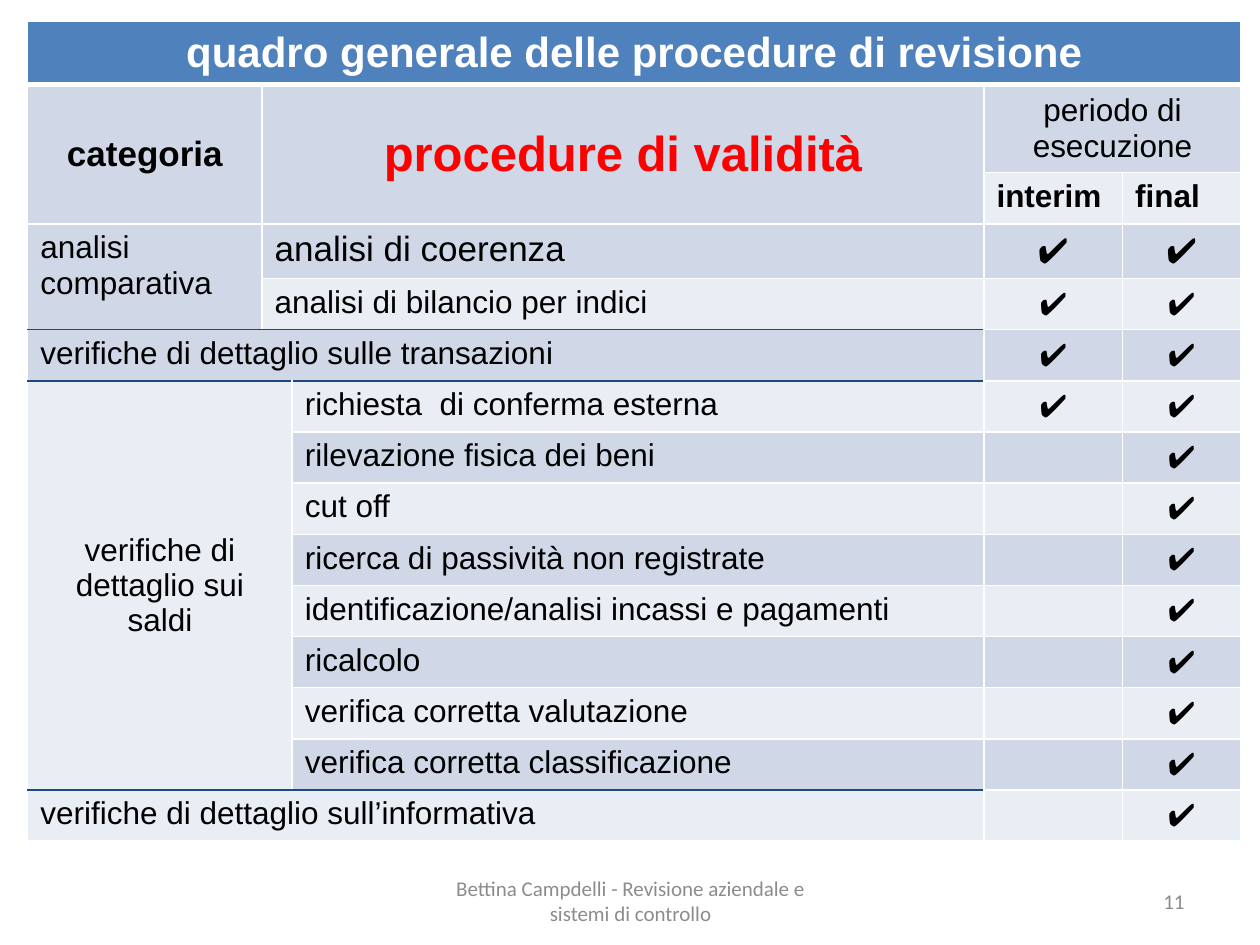
from lxml import etree
from pptx import Presentation
from pptx.dml.color import RGBColor
from pptx.enum.text import MSO_ANCHOR, PP_ALIGN
from pptx.oxml.ns import qn
from pptx.util import Inches, Pt

LEFT, CENTER, RIGHT = PP_ALIGN.LEFT, PP_ALIGN.CENTER, PP_ALIGN.RIGHT
TOP, MIDDLE = MSO_ANCHOR.TOP, MSO_ANCHOR.MIDDLE
WHITE = RGBColor(0xFF, 0xFF, 0xFF)
BLACK = RGBColor(0, 0, 0)
RED = RGBColor(0xFF, 0, 0)
GRAY = RGBColor(0x8C, 0x8C, 0x8C)
BLUE = RGBColor(0x4F, 0x81, 0xBD)
NAVY = RGBColor(0x1F, 0x49, 0x7D)
BANDS = (RGBColor(0xE9, 0xED, 0xF4), RGBColor(0xD0, 0xD8, 0xE8))

COLUMN_WIDTHS = (1.86, 0.21, 5.49, 1.1, 0.94)
ROW_HEIGHTS = [0.46, 0.65] + [6.5 / 16] * 13
SECTION_EDGES = (5, 6, 14)
PERIOD_COLUMN = 3
FIRST_CHECK_ROW, FIRST_BALANCE_ROW = 3, 6
INTERIM_ROWS = range(3, 7)
CHECK = "✔"
BALANCE_CHECKS = (
    "richiesta  di conferma esterna",
    "rilevazione fisica dei beni",
    "cut off",
    "ricerca di passività non registrate",
    "identificazione/analisi incassi e pagamenti",
    "ricalcolo",
    "verifica corretta valutazione",
    "verifica corretta classificazione",
)


class SlideBuilder:
    """Holds the style and the current slide, and adds each kind of element."""

    def __init__(self, slide, table_font="Arial", footer_font="Calibri"):
        self.slide = slide
        self.table_font = table_font
        self.footer_font = footer_font
        self.table = None

    def set_text(self, frame, text, font, size, color, align, bold=False):
        frame.text = text
        for para in frame.paragraphs:
            para.alignment = align
            para.font.size = Pt(size)
            for span in para.runs:
                span.font.name = font
                span.font.size = Pt(size)
                span.font.bold = bold
                span.font.color.rgb = color

    def footer(self, text, left, width, align):
        box = self.slide.shapes.add_textbox(
            Inches(left), Inches(6.95), Inches(width), Inches(0.4))
        frame = box.text_frame
        frame.word_wrap = True
        frame.vertical_anchor = MIDDLE
        self.set_text(frame, text, self.footer_font, 12, GRAY, align)

    def grid(self, left, top):
        frame = self.slide.shapes.add_table(
            len(ROW_HEIGHTS), len(COLUMN_WIDTHS), Inches(left), Inches(top),
            Inches(sum(COLUMN_WIDTHS)), Inches(sum(ROW_HEIGHTS)))
        self.table = frame.table
        for column, width in zip(self.table.columns, COLUMN_WIDTHS):
            column.width = Inches(width)
        for row, height in zip(self.table.rows, ROW_HEIGHTS):
            row.height = Inches(height)

    def edge(self, row, column):
        if row == 1:
            return WHITE, 3
        if row in SECTION_EDGES and column < PERIOD_COLUMN:
            return NAVY, 1
        return WHITE, 1

    def borders(self, cell, top, bottom):
        properties = cell._tc.get_or_add_tcPr()
        sides = (("L", (WHITE, 1)), ("R", (WHITE, 1)), ("T", top), ("B", bottom))
        for index, (side, (color, width)) in enumerate(sides):
            line = etree.Element(qn("a:ln" + side), w=str(Pt(width)))
            fill = etree.SubElement(line, qn("a:solidFill"))
            etree.SubElement(fill, qn("a:srgbClr"), val=str(color))
            properties.insert(index, line)

    def cell(self, row, column, text, rows=1, columns=1, size=18, color=BLACK,
             bold=False, centered=False):
        cell = self.table.cell(row, column)
        if rows * columns > 1:
            cell.merge(self.table.cell(row + rows - 1, column + columns - 1))
        cell.fill.solid()
        cell.fill.fore_color.rgb = BANDS[row % 2] if row else BLUE
        cell.vertical_anchor = MIDDLE if centered else TOP
        self.set_text(cell.text_frame, text, self.table_font, size, color,
                      CENTER if centered else LEFT, bold)
        self.borders(cell, self.edge(row, column), self.edge(row + rows, column))


def main():
    deck = Presentation()
    deck.slide_width, deck.slide_height = Inches(10), Inches(7.5)
    page = SlideBuilder(deck.slides.add_slide(deck.slide_layouts[6]))

    page.footer("Bettina Campdelli - Revisione aziendale e sistemi di controllo",
                3.42, 3.17, CENTER)
    page.footer("11", 7.17, 2.33, RIGHT)

    page.grid(0.22, 0.17)
    page.cell(0, 0, "quadro generale delle procedure di revisione", columns=5,
              size=24, color=WHITE, bold=True, centered=True)
    page.cell(1, 0, "categoria", rows=2, size=20, bold=True, centered=True)
    page.cell(1, 1, "procedure di validità", rows=2, columns=2, size=28,
              color=RED, bold=True, centered=True)
    page.cell(1, 3, "periodo di esecuzione", columns=2, centered=True)
    page.cell(2, 3, "interim", bold=True)
    page.cell(2, 4, "final", bold=True)

    page.cell(3, 0, "analisi comparativa", rows=2)
    page.cell(3, 1, "analisi di coerenza", columns=2, size=20)
    page.cell(4, 1, "analisi di bilancio per indici", columns=2)
    page.cell(5, 0, "verifiche di dettaglio sulle transazioni", columns=3)
    page.cell(FIRST_BALANCE_ROW, 0, "verifiche di dettaglio sui saldi",
              rows=len(BALANCE_CHECKS), columns=2, centered=True)
    for row, text in enumerate(BALANCE_CHECKS, FIRST_BALANCE_ROW):
        page.cell(row, 2, text)
    page.cell(14, 0, "verifiche di dettaglio sull’informativa", columns=3)

    for row in range(FIRST_CHECK_ROW, len(ROW_HEIGHTS)):
        size = 20 if row == FIRST_CHECK_ROW else 18
        interim = CHECK if row in INTERIM_ROWS else ""
        page.cell(row, 3, interim, size=size, centered=True)
        page.cell(row, 4, CHECK, size=size, centered=True)

    deck.save("out.pptx")


if __name__ == "__main__":
    main()
